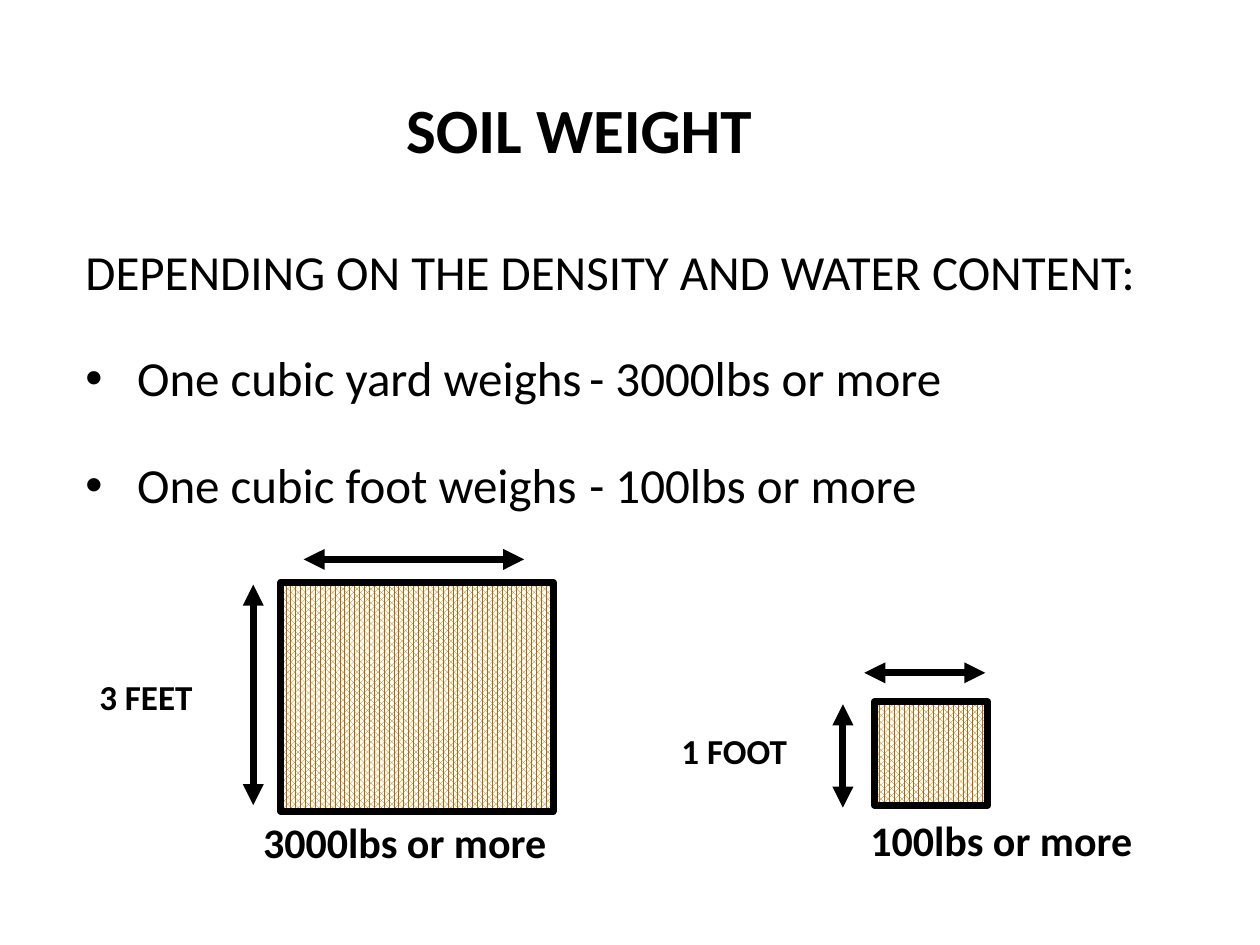
import pptx
import pptx.util
import pptx.dml.color
import pptx.enum.dml
import pptx.enum.shapes
import pptx.enum.text
import pptx.oxml
import pptx.oxml.ns

Inches, Pt = pptx.util.Inches, pptx.util.Pt
RGBColor = pptx.dml.color.RGBColor
qn = pptx.oxml.ns.qn

BLACK = RGBColor(0x00, 0x00, 0x00)
WHITE = RGBColor(0xFF, 0xFF, 0xFF)
SOIL = RGBColor(0xAD, 0x69, 0x00)

TITLE = "SOIL WEIGHT"
LEAD = "DEPENDING ON THE DENSITY AND WATER CONTENT:"
POINTS = ["One cubic yard weighs\t- 3000lbs or more",
          "One cubic foot weighs\t- 100lbs or more"]
HANG, TAB = 0.41, 4

# box: left, top, width, height; arrows: x1, y1, x2, y2
CUBES = [
    {"box": (2.23, 4.62, 2.16, 1.82),
     "arrows": [(2.01, 4.64, 2.01, 6.39), (2.41, 4.44, 4.16, 4.44)],
     "weight": ("3000lbs or more", (1.99, 6.48, 2.76, 0.46)),
     "side": ("3 FEET", (0.69, 5.31, 1.14, 0.43))},
    {"box": (6.94, 5.57, 0.9, 0.82),
     "arrows": [(6.69, 5.59, 6.69, 6.41), (6.86, 5.34, 7.82, 5.34)],
     "weight": ("100lbs or more", (6.81, 6.46, 2.57, 0.46)),
     "side": ("1 FOOT", (5.31, 5.74, 1.2, 0.43))},
]


def inch(nums):
    return [Inches(n) for n in nums]


def add_sub(node, tag, **attrs):
    sub = pptx.oxml.parse_xml(f"<{tag} {pptx.oxml.ns.nsdecls('a')}/>")
    for key, value in attrs.items():
        sub.set(key, value)
    node.append(sub)
    return sub


def style(para, text, size, bold=False):
    para.text = text
    look = {"name": "Calibri", "size": Pt(size), "bold": bold}
    for run in para.runs:
        for key, value in look.items():
            setattr(run.font, key, value)
        run.font.color.rgb = BLACK


def add_text(home, place, text, size, bold=True, wrap=False, **fmt):
    frame = home.add_textbox(*inch(place)).text_frame
    frame.word_wrap = wrap
    frame.auto_size = pptx.enum.text.MSO_AUTO_SIZE.SHAPE_TO_FIT_TEXT
    para = frame.paragraphs[0]
    style(para, text, size, bold)
    for key, value in fmt.items():
        setattr(para, key, value)
    return frame


def add_point(frame, text):
    """Add a bulleted line with a hanging indent and one tab stop."""
    para = frame.add_paragraph()
    para.line_spacing = 0.9
    para.space_before = Pt(30.5)
    props = para._p.get_or_add_pPr()
    props.set("marL", str(Inches(HANG)))
    props.set("indent", str(-Inches(HANG)))
    add_sub(props, "a:buFont", typeface="Arial")
    add_sub(props, "a:buChar", char="•")
    tabs = add_sub(props, "a:tabLst")
    add_sub(tabs, "a:tab", pos=str(Inches(TAB)), algn="l")
    style(para, text, 28)


def add_arrow(home, ends):
    kind = pptx.enum.shapes.MSO_CONNECTOR.STRAIGHT
    arrow = home.add_connector(kind, *inch(ends))
    arrow.line.color.rgb = BLACK
    arrow.line.width = Pt(4)
    for tag in ("a:headEnd", "a:tailEnd"):
        add_sub(arrow.line._get_or_add_ln(), tag, type="triangle")
    add_sub(arrow._element.find(qn("p:spPr")), "a:effectLst")


def add_cube(shapes, cube):
    home = shapes.add_group_shape().shapes
    kind = pptx.enum.shapes.MSO_SHAPE.RECTANGLE
    box = home.add_shape(kind, *inch(cube["box"]))
    box.shadow.inherit = False
    box.fill.patterned()
    box.fill.pattern = pptx.enum.dml.MSO_PATTERN.PERCENT_75
    box.fill.fore_color.rgb = SOIL
    box.fill.back_color.rgb = WHITE
    box.line.color.rgb = BLACK
    box.line.width = Pt(4)
    text, place = cube["weight"]
    add_text(home, place, text, 24, line_spacing=0.9)
    text, place = cube["side"]
    add_text(home, place, text, 20)
    for ends in cube["arrows"]:
        add_arrow(home, ends)


def main():
    deck = pptx.Presentation()
    deck.slide_width, deck.slide_height = inch((10, 7.5))
    shapes = deck.slides.add_slide(deck.slide_layouts[6]).shapes
    add_text(shapes, (1.3, 0.67, 6.59, 0.7), TITLE, 36, wrap=True,
             alignment=pptx.enum.text.PP_ALIGN.CENTER)
    body = add_text(shapes, (0.58, 1.92, 8.62, 2.22), LEAD, 28,
                    bold=False, line_spacing=0.9)
    for text in POINTS:
        add_point(body, text)
    for cube in CUBES:
        add_cube(shapes, cube)
    deck.save("out.pptx")


if __name__ == "__main__":
    main()
